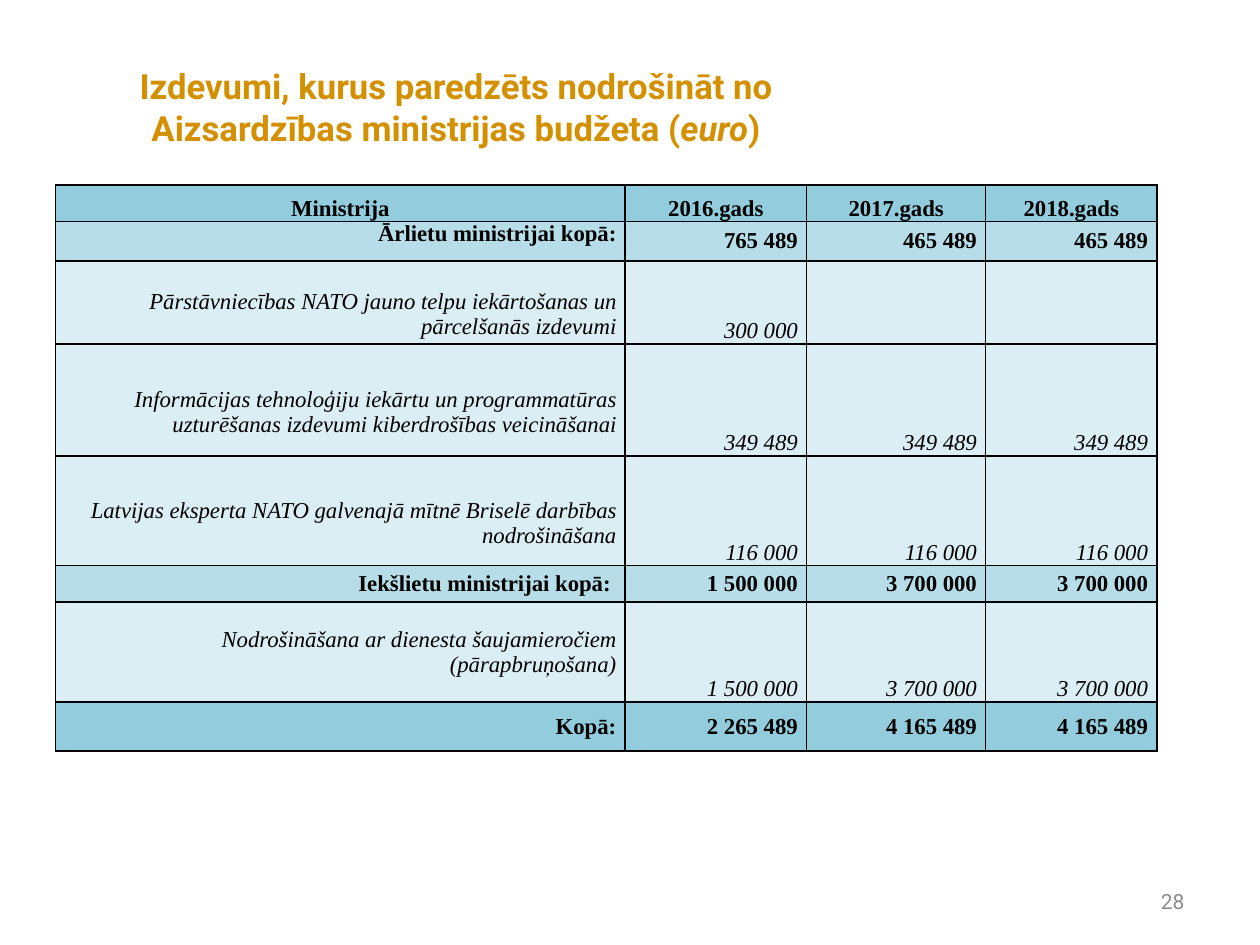
from lxml import etree
from pptx import Presentation
from pptx.dml.color import RGBColor
from pptx.enum.text import MSO_ANCHOR, PP_ALIGN
from pptx.oxml.ns import qn
from pptx.util import Cm, Pt

TOP, MIDDLE, BOTTOM = MSO_ANCHOR.TOP, MSO_ANCHOR.MIDDLE, MSO_ANCHOR.BOTTOM
CENTER, RIGHT = PP_ALIGN.CENTER, PP_ALIGN.RIGHT

GOLD = RGBColor(0xD3, 0x90, 0x01)
GRAY = RGBColor(0x8C, 0x8C, 0x8C)
BLACK = RGBColor(0, 0, 0)
STRONG_BLUE = RGBColor(0x93, 0xCD, 0xDD)
MEDIUM_BLUE = RGBColor(0xB7, 0xDE, 0xE8)
PALE_BLUE = RGBColor(0xDB, 0xEE, 0xF4)

# Content
TITLE = [
    ("Izdevumi, kurus paredzēts nodrošināt no Aizsardzības ministrijas budžeta (", False),
    ("euro", True),
    (")", False),
]
PAGE_NUMBER = "28"
COLUMN_WIDTHS = [11.48, 3.66, 3.61, 3.45]

# Row style, height in cm, top inset of the label in cm, label anchor, cell texts
ROWS = [
    ("header", 0.74, 0, BOTTOM, ["Ministrija", "2016.gads", "2017.gads", "2018.gads"]),
    ("subtotal", 0.79, 0, TOP, ["Ārlietu ministrijai kopā:", "765 489", "465 489", "465 489"]),
    ("detail", 1.67, 0.5, MIDDLE,
     ["Pārstāvniecības NATO jauno telpu iekārtošanas un pārcelšanās izdevumi",
      "300 000", "", ""]),
    ("detail", 2.26, 0.5, MIDDLE,
     ["Informācijas tehnoloģiju iekārtu un programmatūras uzturēšanas izdevumi "
      "kiberdrošības veicināšanai", "349 489", "349 489", "349 489"]),
    ("detail", 2.21, 0.5, MIDDLE,
     ["Latvijas eksperta NATO galvenajā mītnē Briselē darbības nodrošināšana",
      "116 000", "116 000", "116 000"]),
    ("subtotal", 0.74, 0, MIDDLE,
     ["Iekšlietu ministrijai kopā: ", "1 500 000", "3 700 000", "3 700 000"]),
    ("detail", 2.01, 0, MIDDLE,
     ["Nodrošināšana ar dienesta šaujamieročiem (pārapbruņošana)",
      "1 500 000", "3 700 000", "3 700 000"]),
    ("total", 0.99, 0, MIDDLE, ["Kopā:", "2 265 489", "4 165 489", "4 165 489"]),
]

# Fill, value anchor, alignment, bold
ROW_STYLES = {
    "header": (STRONG_BLUE, BOTTOM, CENTER, True),
    "subtotal": (MEDIUM_BLUE, MIDDLE, RIGHT, True),
    "detail": (PALE_BLUE, BOTTOM, RIGHT, False),
    "total": (STRONG_BLUE, MIDDLE, RIGHT, True),
}
TITLE_FONT = {"name": "Roboto", "size": Pt(19.8), "bold": True}
NUMBER_FONT = {"name": "Roboto", "size": Pt(12)}
TABLE_FONT = {"name": "Times New Roman", "size": Pt(13)}


def set_values(target, values):
    for name, value in values.items():
        setattr(target, name, value)


def set_font(font, values, color):
    set_values(font, values)
    font.color.rgb = color


def add_borders(cell):
    properties = cell._tc.get_or_add_tcPr()
    for position, side in enumerate(("a:lnL", "a:lnR", "a:lnT", "a:lnB")):
        line = etree.Element(qn(side), w=str(Pt(1)))
        fill = etree.SubElement(line, qn("a:solidFill"))
        etree.SubElement(fill, qn("a:srgbClr"), val=str(BLACK))
        properties.insert(position, line)


def add_title(slide):
    title = slide.shapes.title
    set_values(title, {"left": Cm(1.09), "top": Cm(1.93),
                       "width": Cm(16.2), "height": Cm(1.2)})
    frame = title.text_frame
    set_values(frame, {"word_wrap": True, "vertical_anchor": BOTTOM,
                       "margin_top": 0, "margin_bottom": Cm(0.14)})
    paragraph = frame.paragraphs[0]
    paragraph.alignment = CENTER
    for text, italic in TITLE:
        run = paragraph.add_run()
        run.text = text
        set_font(run.font, {**TITLE_FONT, "italic": italic}, GOLD)


def add_table(slide):
    frame = slide.shapes.add_table(len(ROWS), len(COLUMN_WIDTHS), Cm(1.12), Cm(3.73),
                                   Cm(sum(COLUMN_WIDTHS)), Cm(sum(row[1] for row in ROWS)))
    table = frame.table
    for column, width in zip(table.columns, COLUMN_WIDTHS):
        column.width = Cm(width)
    for row, (style, height, label_inset, label_anchor, texts) in zip(table.rows, ROWS):
        row.height = Cm(height)
        fill, value_anchor, alignment, bold = ROW_STYLES[style]
        for index, (cell, text) in enumerate(zip(row.cells, texts)):
            is_label = index == 0
            set_values(cell, {
                "text": text,
                "margin_left": Cm(0.18), "margin_right": Cm(0.18), "margin_bottom": 0,
                "margin_top": Cm(label_inset if is_label else 0),
                "vertical_anchor": label_anchor if is_label else value_anchor,
            })
            cell.fill.solid()
            cell.fill.fore_color.rgb = fill
            add_borders(cell)
            paragraph = cell.text_frame.paragraphs[0]
            paragraph.alignment = alignment
            set_font(paragraph.font, {**TABLE_FONT, "bold": bold, "italic": not bold}, BLACK)


def add_page_number(slide):
    box = slide.shapes.add_textbox(Cm(18.21), Cm(17.65), Cm(5.92), Cm(1.02))
    frame = box.text_frame
    set_values(frame, {"text": PAGE_NUMBER, "word_wrap": True, "vertical_anchor": MIDDLE})
    paragraph = frame.paragraphs[0]
    paragraph.alignment = RIGHT
    set_font(paragraph.font, NUMBER_FONT, GRAY)


def main():
    presentation = Presentation()
    presentation.slide_width, presentation.slide_height = Cm(25.4), Cm(19.05)
    slide = presentation.slides.add_slide(presentation.slide_layouts[5])
    add_title(slide)
    add_table(slide)
    add_page_number(slide)
    presentation.save("out.pptx")


if __name__ == "__main__":
    main()
